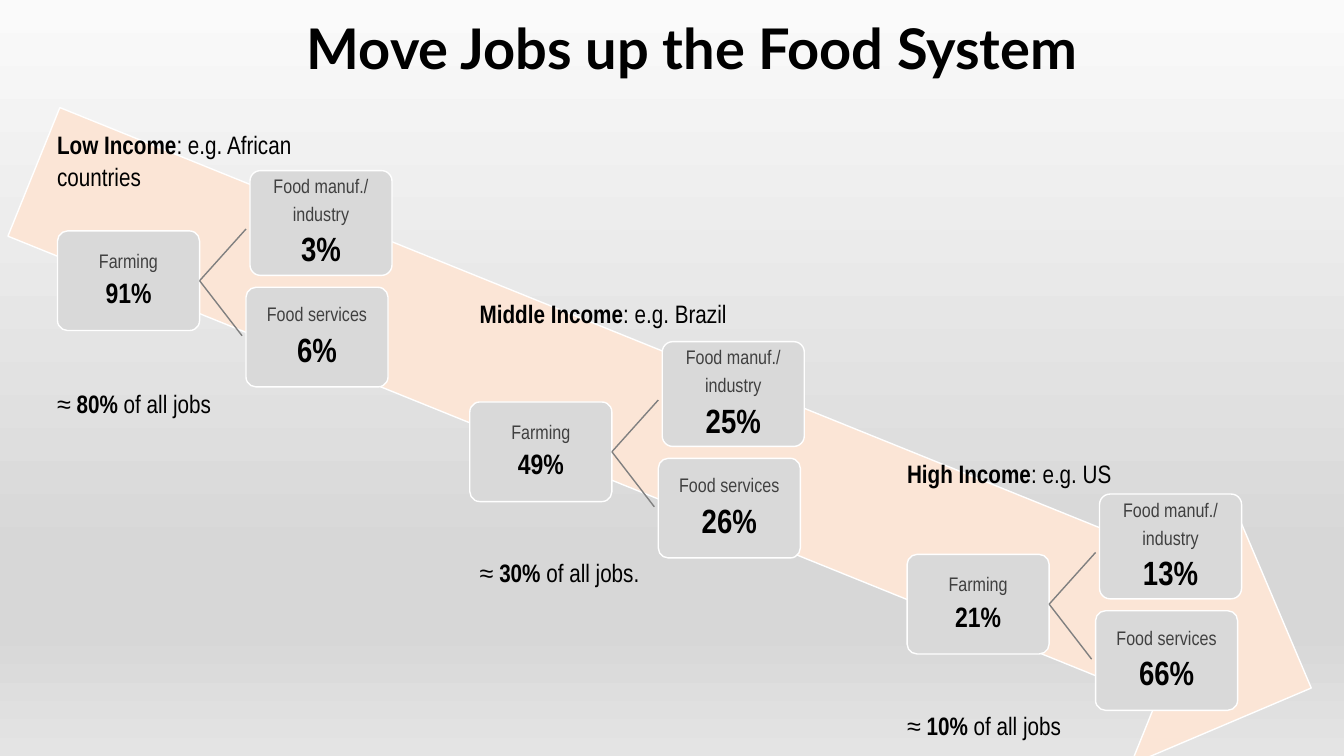
from pptx import Presentation
from pptx.dml.color import RGBColor
from pptx.enum.shapes import MSO_CONNECTOR as Line, MSO_SHAPE as Shape
from pptx.enum.text import MSO_ANCHOR as Anchor, PP_ALIGN as Align
from pptx.oxml import parse_xml
from pptx.oxml.ns import nsdecls
from pptx.oxml.xmlchemy import OxmlElement
from pptx.util import Cm, Pt

# Content; all lengths in cm
TITLE = "Move Jobs up the Food System"
GROUPS = [
    dict(income="Low Income", example=": e.g. African countries",
         share="80%", ending=" of all jobs",
         farming="91%", industry="3%", services="6%",
         corner=(1.45, 5.82), heading=(1.19, 3.07), jobs_top=9.6, width=7.87),
    dict(income="Middle Income", example=": e.g. Brazil",
         share="30%", ending=" of all jobs.",
         farming="49%", industry="25%", services="26%",
         corner=(11.84, 10.13), heading=(11.84, 7.34), jobs_top=13.86, width=8.71),
    dict(income="High Income", example=": e.g. US",
         share="10%", ending=" of all jobs",
         farming="21%", industry="13%", services="66%",
         corner=(22.86, 13.97), heading=(22.61, 11.38), jobs_top=17.71, width=10.06),
]
# Each branch: key, label lines, offset from the farming box, height, line end offset
BRANCHES = [
    ("industry", ["Food manuf./", "industry"], (4.85, -1.52), 2.64, -0.05),
    ("services", ["Food services"], (4.75, 1.42), 2.51, 2.64),
]
BOX_WIDTH, BOX_HEIGHT, LINE_GAP = 3.58, 2.51, 0.1
BACKGROUND = [(0, "FAFAFA"), (74, "D7D7D7"), (83, "D7D7D7"), (100, "E4E4E4")]
COLOURS = dict(arrow="FBE5D6", box="D9D9D9", edge="FFFFFF",
               link="808080", label="404040", text="000000")
BODY_FONT, TITLE_FONT = "Arial Narrow", "Lato"


def colour(name):
    return RGBColor.from_string(COLOURS[name])


def style_font(font, name, size, shade, bold=None):
    font.name, font.size, font.bold = name, Pt(size), bold
    font.color.rgb = colour(shade)


def add_panel(kind, left, top, width, height, fill):
    panel = page.shapes.add_shape(kind, Cm(left), Cm(top), Cm(width), Cm(height))
    panel.shadow.inherit = False
    panel.fill.solid()
    panel.fill.fore_color.rgb = colour(fill)
    panel.line.color.rgb = colour("edge")
    panel.line.width = Pt(1)
    return panel


def add_job_box(left, top, height, labels, value, value_size):
    box = add_panel(Shape.ROUNDED_RECTANGLE, left, top, BOX_WIDTH, height, "box")
    box.adjustments[0] = 0.1
    frame = box.text_frame
    frame.word_wrap, frame.vertical_anchor = True, Anchor.MIDDLE
    frame.margin_left = frame.margin_right = Cm(0.1)
    frame.margin_top = frame.margin_bottom = Cm(0.1)
    rows = [(label, 14, "label", False) for label in labels]
    rows.append((value, value_size, "text", True))
    for index, (text, size, shade, bold) in enumerate(rows):
        para = frame.add_paragraph() if index else frame.paragraphs[0]
        para.text, para.alignment = text, Align.CENTER
        para.line_spacing, para.space_after = 0.9, Pt(size * 0.35)
        style_font(para.font, BODY_FONT, size, shade, bold)
    return box


def add_link(farming, x, y):
    link = page.shapes.add_connector(
        Line.STRAIGHT, farming.left, farming.top, Cm(x), Cm(y))
    link.begin_connect(farming, 3)
    link.line.color.rgb = colour("link")
    link.line.width = Pt(1)
    link._element.spPr.append(OxmlElement("a:effectLst"))


def add_text(left, top, width, height, spans, font, size, spacing):
    box = page.shapes.add_textbox(Cm(left), Cm(top), Cm(width), Cm(height))
    box.text_frame.word_wrap = True
    para = box.text_frame.paragraphs[0]
    para.line_spacing = spacing
    style_font(para.font, font, size, "text")
    for text, bold in spans:
        span = para.add_run()
        span.text, span.font.bold = text, bold
    return box


deck = Presentation()
deck.slide_width, deck.slide_height = Cm(33.87), Cm(19.05)
page = deck.slides.add_slide(deck.slide_layouts[6])

# Background gradient, top to bottom
stops = "".join(f'<a:gs pos="{place * 1000}"><a:srgbClr val="{shade}"/></a:gs>'
                for place, shade in BACKGROUND)
page._element.cSld.insert(0, parse_xml(
    f'<p:bg {nsdecls("p", "a")}><p:bgPr><a:gradFill><a:gsLst>{stops}</a:gsLst>'
    '<a:lin ang="5400000" scaled="0"/></a:gradFill><a:effectLst/></p:bgPr></p:bg>'))

# Falling arrow and title
arrow = add_panel(Shape.RIGHT_ARROW, -0.41, 7.34, 34.72, 6.99, "arrow")
arrow.rotation = 22
title = add_text(0.51, 0.36, 33.87, 1.88, [(TITLE, True)], TITLE_FONT, 40, 0.9)
title.text_frame.vertical_anchor = Anchor.MIDDLE
title.text_frame.paragraphs[0].alignment = Align.CENTER

# Income groups
for group in GROUPS:
    left, top = group["corner"]
    farming = add_job_box(left, top, BOX_HEIGHT, ["Farming"], group["farming"], 20)
    for key, labels, (right, down), height, end in BRANCHES:
        add_job_box(left + right, top + down, height, labels, group[key], 24)
        add_link(farming, left + right - LINE_GAP, top + end)

    text_left, heading_top = group["heading"]
    heading = [(group["income"], True), (group["example"], False)]
    jobs = [("≈ ", False), (group["share"], True), (group["ending"], False)]
    for text_top, height, spans in ((heading_top, 1.8, heading),
                                    (group["jobs_top"], 1.05, jobs)):
        add_text(text_left, text_top, group["width"], height,
                 spans, BODY_FONT, 18, 1.07)

deck.save("out.pptx")
